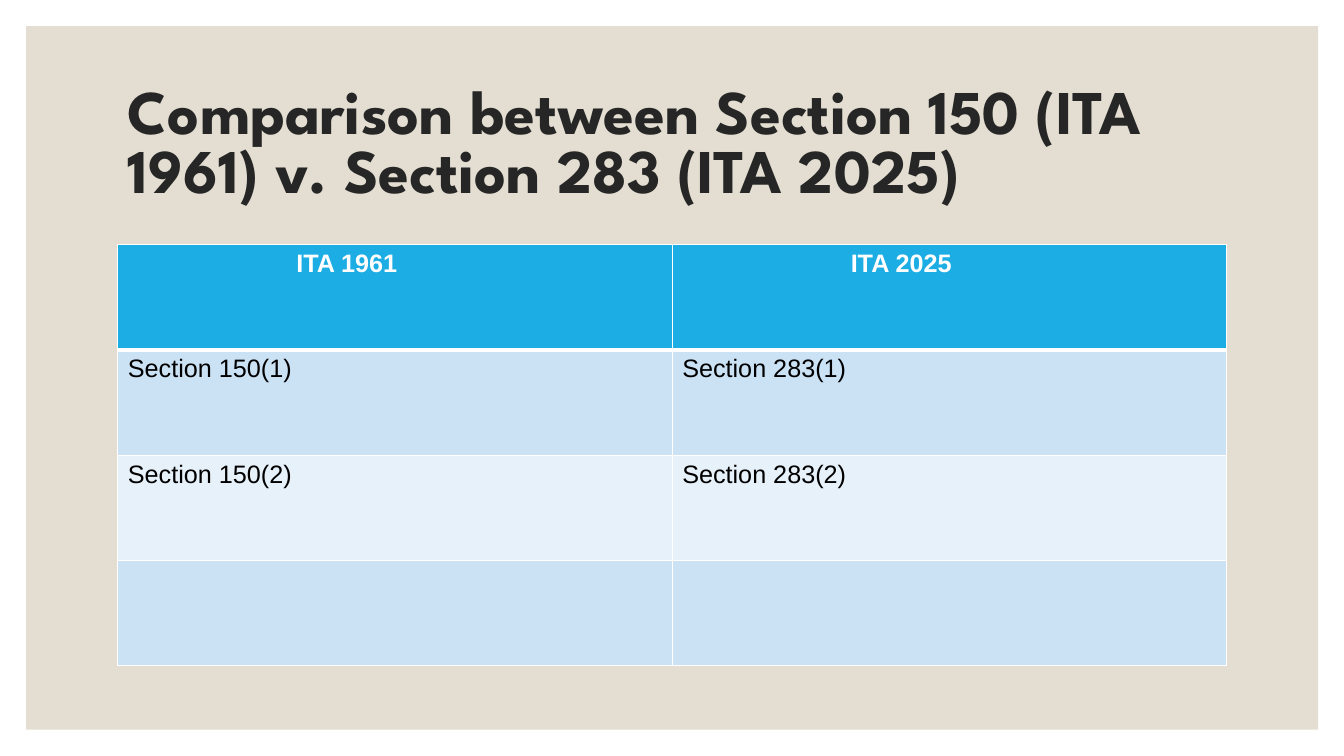
from dataclasses import dataclass

from lxml.etree import SubElement
from pptx import Presentation
from pptx.dml.color import RGBColor
from pptx.enum.shapes import MSO_SHAPE
from pptx.enum.text import MSO_ANCHOR, MSO_AUTO_SIZE, PP_ALIGN
from pptx.oxml.ns import qn
from pptx.util import Cm, Pt


@dataclass(frozen=True)
class Theme:
    panel: str = "E3DED1"
    title: str = "262626"
    head: str = "1CADE4"
    bands: tuple = ("CBE2F5", "E7F1FA")
    white: str = "FFFFFF"
    black: str = "000000"
    big: float = 44.4
    body: float = 18
    thin: float = 0.96
    thick: float = 3
    display: str = "League Spartan"
    sans: str = "Arial"


THEME = Theme()
ROWS = [
    ("ITA 1961", "ITA 2025"),
    ("Section 150(1)", "Section 283(1)"),
    ("Section 150(2)", "Section 283(2)"),
    ("", ""),
]


def write(frame, text, *, font, size, color, bold=False, space=None):
    par = frame.paragraphs[0]
    par.alignment = PP_ALIGN.LEFT
    par.line_spacing = space
    par.font.size = Pt(size)
    run = par.add_run()
    run.text = text
    run.font.name = font
    run.font.size = Pt(size)
    run.font.bold = bold
    run.font.color.rgb = RGBColor.from_string(color)


def edge(cell, side, width):
    props = cell._tc.get_or_add_tcPr()
    line = SubElement(props, qn(f"a:ln{side}"), w=str(Pt(width)))
    fill = SubElement(line, qn("a:solidFill"))
    SubElement(fill, qn("a:srgbClr"), val=THEME.white)


# Backdrop panel, placed behind the title
def add_panel(slide, left, top, width, height):
    panel = slide.shapes.add_shape(
        MSO_SHAPE.RECTANGLE, Cm(left), Cm(top), Cm(width), Cm(height))
    panel.shadow.inherit = False
    panel.fill.solid()
    panel.fill.fore_color.rgb = RGBColor.from_string(THEME.panel)
    panel.line.fill.background()
    panel.element.addnext(slide.shapes.title.element)


# Heading
def add_title(slide, text, left, top, width, height):
    title = slide.shapes.title
    title.left, title.top = Cm(left), Cm(top)
    title.width, title.height = Cm(width), Cm(height)
    frame = title.text_frame
    frame.word_wrap = True
    frame.auto_size = MSO_AUTO_SIZE.NONE
    frame.vertical_anchor = MSO_ANCHOR.MIDDLE
    write(frame, text, font=THEME.display, size=THEME.big,
          color=THEME.title, bold=True, space=0.8)


# Comparison table: a header row over banded rows
def add_grid(slide, rows, left, top, width, height):
    count = len(rows[0])
    table = slide.shapes.add_table(
        len(rows), count, Cm(left), Cm(top), Cm(width), Cm(height)).table
    for col in table.columns:
        col.width = Cm(width / count)
    for i, row in enumerate(rows):
        table.rows[i].height = Cm(height / len(rows))
        head = i == 0
        back = THEME.head if head else THEME.bands[(i - 1) % 2]
        for j, text in enumerate(row):
            cell = table.cell(i, j)
            if head:
                cell.margin_left = Cm(4.5)
            for side in "LRTB":
                rule = (i, side) in ((0, "B"), (1, "T"))
                edge(cell, side, THEME.thick if rule else THEME.thin)
            cell.fill.solid()
            cell.fill.fore_color.rgb = RGBColor.from_string(back)
            if text:
                write(cell.text_frame, text, font=THEME.sans, size=THEME.body,
                      color=THEME.white if head else THEME.black, bold=head)


def main():
    deck = Presentation()
    deck.slide_width, deck.slide_height = Cm(33.87), Cm(19.05)
    slide = deck.slides.add_slide(deck.slide_layouts[5])
    add_panel(slide, 0.66, 0.66, 32.56, 17.73)
    add_title(slide, "Comparison between Section 150 (ITA 1961) v. "
              "Section 283 (ITA 2025)", 2.97, 1.78, 27.94, 3.81)
    add_grid(slide, ROWS, 2.97, 6.17, 27.94, 10.6)
    deck.save("out.pptx")


if __name__ == "__main__":
    main()
